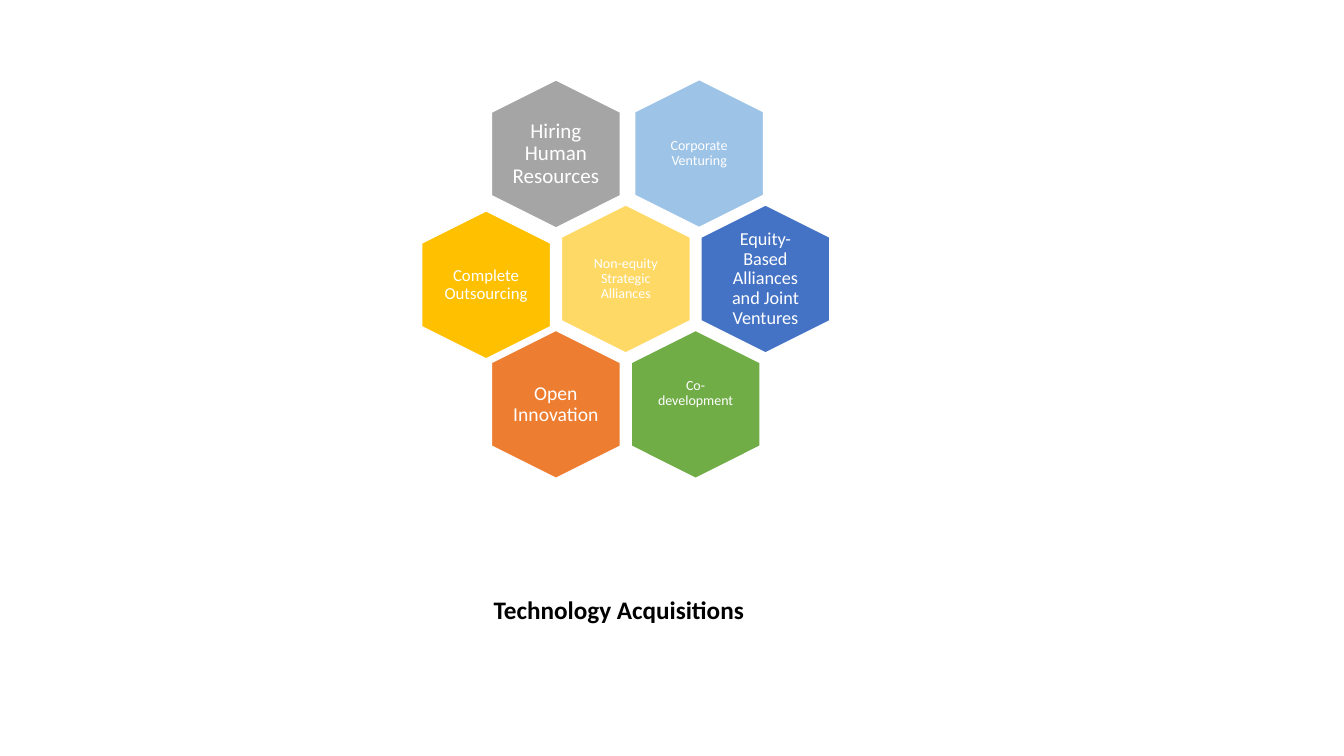
from pptx import Presentation
from pptx.dml.color import RGBColor
from pptx.enum.shapes import MSO_SHAPE as Shape
from pptx.enum.text import MSO_ANCHOR as Anchor, MSO_AUTO_SIZE as AutoSize, PP_ALIGN as Align
from pptx.util import Cm, Pt

HEX_LENGTH, HEX_WIDTH = 3.73, 3.25
LABEL_WIDTH, LABEL_HEIGHT = 2.23, 2.56
CENTER_X, CENTER_Y = 15.77, 7.03
HALF_STEP, ROW_STEP = 1.76, 3.16

# column, row, nudge x, nudge y, label, size, fill, inset, lift
METHODS = [
    (1, -1, 0.09, 0, "Corporate Venturing", 10, "9DC3E6", 0.1, 0),
    (-1, -1, 0, 0.01, "Hiring Human Resources", 15, "A5A5A5", 0, 0),
    (0, 0, 0, 0, "Non-equity Strategic Alliances", 10, "FFD966", 0.1, 0),
    (2, 0, 0, 0, "Equity-Based Alliances and Joint Ventures", 13, "4472C4", 0, 0),
    (1, 1, 0, 0, "Co-development", 10, "70AD47", 0.1, 0.53),
    (-1, 1, 0, 0, "Open Innovation", 14, "ED7D31", 0, 0),
    (-2, 0, 0, 0.15, "Complete Outsourcing", 12, "FFC000", 0, 0),
]


def rgb(value):
    """Turn a hex string into a colour."""
    return RGBColor.from_string(value)


def add_text(shapes, text, left, top, width, height, *, size, color="FFFFFF", bold=False,
             align=Align.LEFT, anchor=Anchor.TOP, spacing=None, insets=None):
    """Add a wrapping text box with one formatted paragraph."""
    sp = shapes.add_textbox(Cm(left), Cm(top), Cm(width), Cm(height))
    tf = sp.text_frame
    tf.word_wrap = True
    tf.vertical_anchor = anchor
    if insets:
        tf.margin_left, tf.margin_top, tf.margin_right, tf.margin_bottom = map(Cm, insets)
    p = tf.paragraphs[0]
    p.alignment = align
    p.line_spacing = spacing
    r = p.add_run()
    r.text = text
    r.font.name = "Calibri"
    r.font.size = Pt(size)
    r.font.bold = bold
    r.font.color.rgb = rgb(color)
    return sp


def add_hexagon(shapes, x, y, fill):
    """Add an upright hexagon centred on x, y."""
    sp = shapes.add_shape(Shape.HEXAGON, Cm(x - HEX_LENGTH / 2), Cm(y - HEX_WIDTH / 2),
                          Cm(HEX_LENGTH), Cm(HEX_WIDTH))
    sp.rotation = 90
    sp.shadow.inherit = False
    sp.fill.solid()
    sp.fill.fore_color.rgb = rgb(fill)
    sp.line.color.rgb = rgb("FFFFFF")
    sp.line.width = Pt(1)


def add_method(shapes, column, row, nudge_x, nudge_y, label, size, fill, inset, lift):
    """Add one labelled hexagon of the honeycomb."""
    x = CENTER_X + column * HALF_STEP + nudge_x
    y = CENTER_Y + row * ROW_STEP + nudge_y
    add_hexagon(shapes, x, y, fill)
    add_text(shapes, label, x - LABEL_WIDTH / 2, y - LABEL_HEIGHT / 2, LABEL_WIDTH, LABEL_HEIGHT,
             size=size, align=Align.CENTER, anchor=Anchor.MIDDLE, spacing=0.9,
             insets=(inset, inset, inset, inset + lift))


def main():
    """Build the slide and save it."""
    prs = Presentation()
    prs.slide_width, prs.slide_height = Cm(33.87), Cm(19.05)
    s = prs.slides.add_slide(prs.slide_layouts[6])
    honeycomb = s.shapes.add_group_shape()
    for method in METHODS:
        add_method(honeycomb.shapes, *method)
    caption = add_text(s.shapes, "Technology Acquisitions", 12.19, 14.86, 8.03, 1.02,
                       size=18, color="000000", bold=True)
    caption.text_frame.auto_size = AutoSize.SHAPE_TO_FIT_TEXT
    prs.save("out.pptx")


if __name__ == "__main__":
    main()
